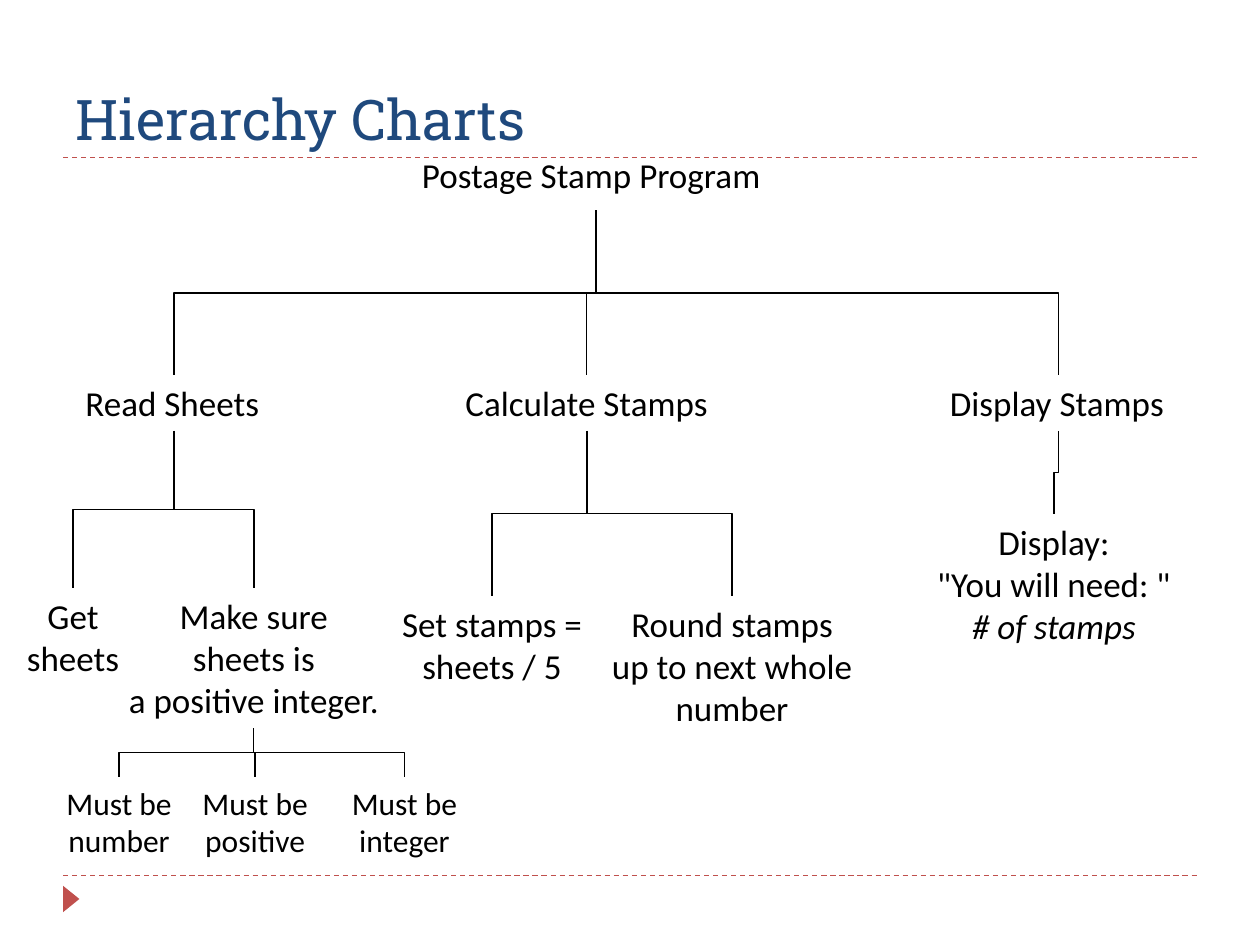
"""Build the hierarchy chart slide of a postage stamp program."""
from dataclasses import dataclass
from typing import Any

import pptx
import pptx.dml.color
import pptx.enum.dml
import pptx.enum.shapes
import pptx.enum.text
import pptx.oxml.ns
import pptx.util
from lxml import etree

Inches = pptx.util.Inches
Pt = pptx.util.Pt
RGBColor = pptx.dml.color.RGBColor
Align = pptx.enum.text.PP_ALIGN
Anchor = pptx.enum.text.MSO_ANCHOR
AutoSize = pptx.enum.text.MSO_AUTO_SIZE
Connector = pptx.enum.shapes.MSO_CONNECTOR

BLACK = RGBColor(0x00, 0x00, 0x00)
NAVY = RGBColor(0x1F, 0x49, 0x7D)
RED = RGBColor(0xC0, 0x50, 0x4D)
TITLE_FONT = {"name": "Roboto Slab", "size": Pt(32)}
TASK_FONT = {"name": "Calibri", "size": Pt(20)}
CHECK_FONT = {"name": "Calibri", "size": Pt(18)}
TITLE_FRAME = {"word_wrap": True, "vertical_anchor": Anchor.BOTTOM}
NODE_FRAME = {"word_wrap": False, "auto_size": AutoSize.SHAPE_TO_FIT_TEXT}


@dataclass
class Node:
    left: float
    top: float
    width: float
    height: float
    lines: tuple[str, ...]
    align: Any = Align.CENTER
    italic_line: int = -1
    wrap: bool = False


@dataclass
class Branch:
    x: float
    y: float
    children: tuple[Node, ...]
    font: dict[str, Any]


ROOT = Node(3.25, 1.17, 2.92, 0.44, ("Postage Stamp Program",), Align.LEFT)
BRANCHES = (
    Branch(4.73, 1.67, (
        Node(0.58, 2.98, 1.6, 0.44, ("Read Sheets",), Align.LEFT),
        Node(3.58, 2.98, 2.15, 0.44, ("Calculate Stamps",)),
        Node(7.44, 2.98, 1.92, 0.44, ("Display Stamps",), Align.LEFT),
    ), TASK_FONT),
    Branch(1.38, 3.42, (
        Node(0.11, 4.67, 0.94, 0.77, ("Get", "sheets")),
        Node(0.91, 4.67, 2.21, 1.11, ("Make sure", "sheets is", "a positive integer.")),
    ), TASK_FONT),
    Branch(4.66, 3.42, (
        Node(3.08, 4.73, 1.65, 0.77, ("Set stamps =", "sheets / 5")),
        Node(4.75, 4.73, 2.12, 1.11, ("Round stamps", "up to next whole", "number")),
    ), TASK_FONT),
    Branch(8.4, 3.42, (
        Node(7.33, 4.08, 2.07, 1.11, ("Display:", '"You will need: "', "# of stamps"),
             italic_line=2),
    ), TASK_FONT),
    Branch(2.01, 5.78, (
        Node(0.42, 6.17, 1.05, 0.71, ("Must be", "number")),
        Node(1.5, 6.17, 1.05, 0.71, ("Must be", "positive")),
        Node(2.67, 6.17, 1.08, 0.71, ("Must be integer",), wrap=True),
    ), CHECK_FONT),
)


def apply(target: Any, values: dict[str, Any]) -> None:
    """Set each attribute of the target from its format value."""
    for name, value in values.items():
        setattr(target, name, value)


def add_text(s: Any, node: Node, font: dict[str, Any], color: RGBColor,
             frame: dict[str, Any]) -> None:
    """Write the lines of a node, one paragraph each."""
    sp = s.shapes.add_textbox(Inches(node.left), Inches(node.top),
                              Inches(node.width), Inches(node.height))
    tf = sp.text_frame
    apply(tf, frame)
    for i, line in enumerate(node.lines):
        p = tf.paragraphs[0] if i == 0 else tf.add_paragraph()
        p.alignment = node.align
        r = p.add_run()
        r.text = line
        apply(r.font, font)
        r.font.color.rgb = color
        if i == node.italic_line:
            r.font.italic = True


def add_node(s: Any, node: Node, font: dict[str, Any]) -> None:
    """Add one box of the hierarchy."""
    add_text(s, node, font, BLACK, {**NODE_FRAME, "word_wrap": node.wrap})


def add_line(s: Any, kind: Any, x1: float, y1: float, x2: float, y2: float,
             color: RGBColor, dash: Any = None) -> Any:
    """Add a thin connector without a shadow."""
    sp = s.shapes.add_connector(kind, Inches(x1), Inches(y1), Inches(x2), Inches(y2))
    sp.line.color.rgb = color
    apply(sp.line, {"width": Pt(0.75), "dash_style": dash})
    etree.SubElement(sp.element.spPr, pptx.oxml.ns.qn("a:effectLst"))
    return sp


def add_link(s: Any, x: float, y: float, child: Node) -> None:
    """Lead an elbow down, across and down to the top middle of a child."""
    end_x = child.left + child.width / 2
    length, reach = child.top - y, abs(end_x - x)
    left = (x + end_x - length) / 2
    top = (y + child.top - reach) / 2
    sp = add_line(s, Connector.ELBOW, left, top, left + length, top + reach, BLACK)
    xfrm = sp.element.spPr.xfrm
    xfrm.rot = 270 if end_x > x else 90
    xfrm.flipH = end_x > x


def add_frame(s: Any) -> None:
    """Add the title, the dashed rules and the corner marker."""
    for y in (6.95, 1.25):
        add_line(s, Connector.STRAIGHT, 0.5, y, 9.5, y, RED,
                 pptx.enum.dml.MSO_LINE.DASH)
    sp = s.shapes.add_shape(pptx.enum.shapes.MSO_SHAPE.ISOSCELES_TRIANGLE,
                            Inches(0.46), Inches(7.07), Inches(0.21), Inches(0.13))
    sp.rotation = 90
    sp.shadow.inherit = False
    sp.fill.solid()
    sp.fill.fore_color.rgb = RED
    sp.line.fill.background()
    title = Node(0.5, 0.17, 9, 1.08, ("Hierarchy Charts",), Align.LEFT)
    add_text(s, title, TITLE_FONT, NAVY, TITLE_FRAME)


def main() -> None:
    """Build and save the slide."""
    prs = pptx.Presentation()
    apply(prs, {"slide_width": Inches(10), "slide_height": Inches(7.5)})
    s = prs.slides.add_slide(prs.slide_layouts[6])
    add_frame(s)
    add_node(s, ROOT, TASK_FONT)
    for branch in BRANCHES:
        for child in branch.children:
            add_node(s, child, branch.font)
            add_link(s, branch.x, branch.y, child)
    prs.save("out.pptx")


if __name__ == "__main__":
    main()
